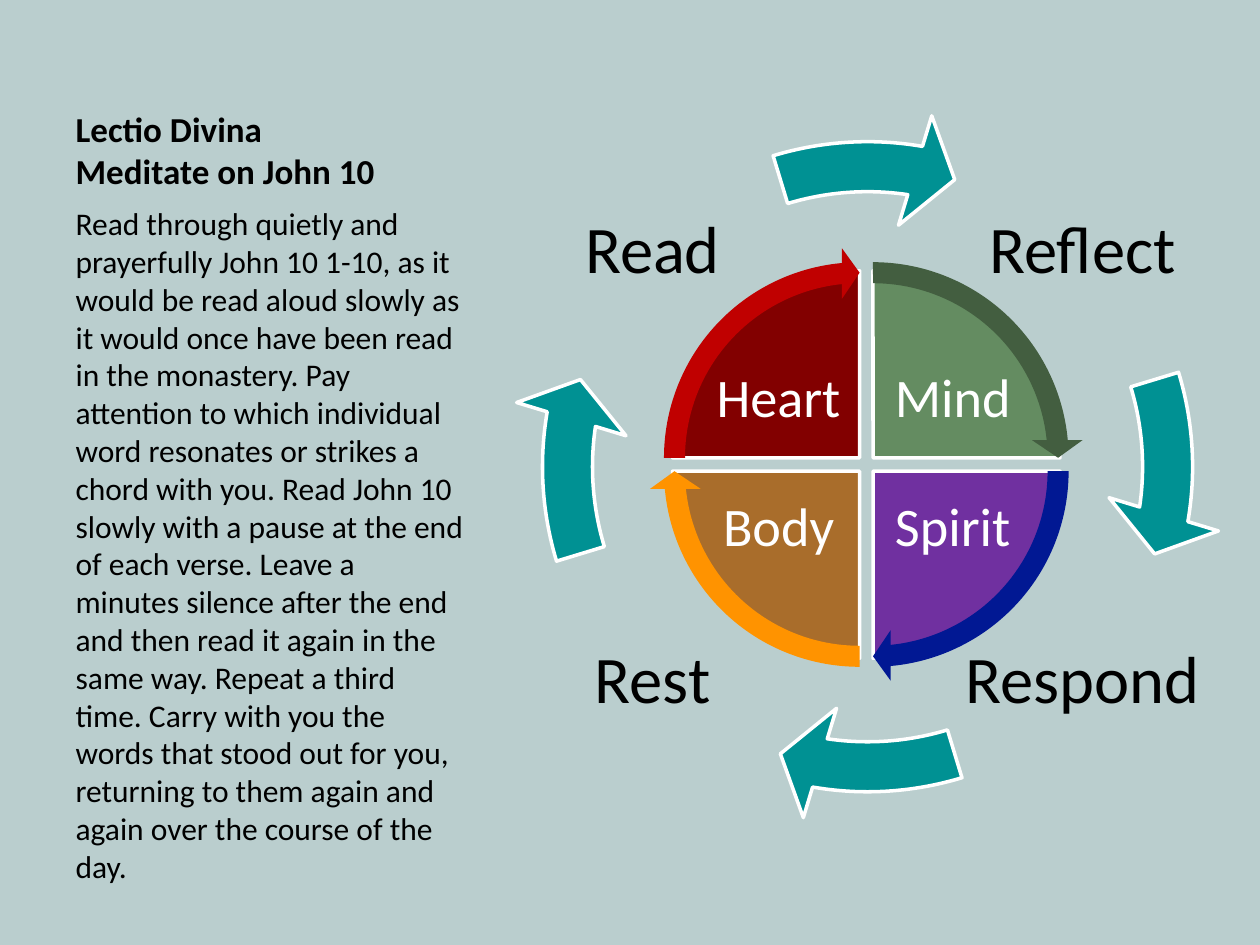
from pptx import Presentation
from pptx.dml.color import RGBColor
from pptx.enum import shapes, text
from pptx.util import Cm, Pt

COLORS = {
    "background": "BACECE", "black": "000000", "white": "FFFFFF", "cycle": "009193",
    "heart": "820000", "heart_arrow": "C00000",
    "mind": "648C61", "mind_arrow": "435E40",
    "spirit": "7030A0", "spirit_arrow": "011893",
    "body": "A96D2B", "body_arrow": "FF9300",
}
FONT = "Calibri"
ANGLE_UNIT = 0.6  # adjustment value of one degree

TITLE_LINES = ["Lectio Divina ", "Meditate on John 10"]
INSTRUCTIONS = (
    "Read through quietly and prayerfully John 10 1-10, as it would be read aloud slowly "
    "as it would once have been read in the monastery. Pay attention to which individual "
    "word resonates or strikes a chord with you. Read John 10 slowly with a pause at the "
    "end of each verse. Leave a minutes silence after the end and then read it again in "
    "the same way. Repeat a third time. Carry with you the words that stood out for you, "
    "returning to them again and again over the course of the day."
)
# Name, column, row and start angle of each quarter, clockwise from top right
QUARTERS = [("Mind", 1, 0, 270), ("Spirit", 1, 1, 0), ("Body", 0, 1, 90), ("Heart", 0, 0, 180)]
# Name, column, row and start angle of the arrow that follows each step
STEPS = [("Reflect", 1, 0, 343.11), ("Respond", 1, 1, 73.11),
         ("Rest", 0, 1, 163.11), ("Read", 0, 0, 253.11)]


def color(name):
    return RGBColor.from_string(COLORS[name])


def add_run(paragraph, words, size, color_name, bold=False):
    run = paragraph.add_run()
    run.text = words
    run.font.name = FONT
    run.font.size = Pt(size)
    run.font.bold = bold
    run.font.color.rgb = color(color_name)


def add_label(slide, words, box, size, color_name, inset):
    frame = slide.shapes.add_textbox(*map(Cm, box)).text_frame
    frame.word_wrap = True
    frame.vertical_anchor = text.MSO_ANCHOR.MIDDLE
    frame.margin_left = frame.margin_right = Cm(inset)
    frame.margin_top = frame.margin_bottom = Cm(inset)
    paragraph = frame.paragraphs[0]
    paragraph.alignment = text.PP_ALIGN.CENTER
    paragraph.line_spacing = 0.9
    add_run(paragraph, words, size, color_name)


def add_round_shape(slide, kind, left, top, size, adjustments, fill, outlined):
    shape = slide.shapes.add_shape(kind, Cm(left), Cm(top), Cm(size), Cm(size))
    shape.shadow.inherit = False
    for index, value in enumerate(adjustments):
        shape.adjustments[index] = value
    shape.fill.solid()
    shape.fill.fore_color.rgb = color(fill)
    if outlined:
        shape.line.color.rgb = color("white")
        shape.line.width = Pt(2)
    else:
        shape.line.fill.background()


def add_arc_arrow(slide, left, top, size, start, end, thickness, head_angle, head_width,
                  fill, outlined):
    adjustments = [thickness, head_angle * ANGLE_UNIT, end % 360 * ANGLE_UNIT,
                   start * ANGLE_UNIT, head_width]
    add_round_shape(slide, shapes.MSO_SHAPE.CIRCULAR_ARROW, left, top, size,
                    adjustments, fill, outlined)


def place(placeholder, box, anchor):
    placeholder.left, placeholder.top, placeholder.width, placeholder.height = map(Cm, box)
    frame = placeholder.text_frame
    frame.word_wrap = True
    frame.auto_size = text.MSO_AUTO_SIZE.NONE
    frame.vertical_anchor = anchor
    paragraph = frame.paragraphs[0]
    paragraph.alignment = text.PP_ALIGN.LEFT
    paragraph.space_before = Pt(0)
    return paragraph


def add_caption(slide, left, top, width, height):
    title_height = 3.23
    paragraph = place(slide.shapes.title, (left, top, width, title_height),
                      text.MSO_ANCHOR.BOTTOM)
    for index, line in enumerate(TITLE_LINES):
        if index:
            paragraph.add_line_break()
        add_run(paragraph, line, 20, "black", bold=True)

    box = (left, top + title_height, width, height - title_height)
    paragraph = place(slide.placeholders[2], box, text.MSO_ANCHOR.TOP)
    add_run(paragraph, INSTRUCTIONS, 18, "black")


def add_wheel(slide, left, top, size, gap):
    # Quarters with their names
    for name, column, row, start in QUARTERS:
        add_round_shape(slide, shapes.MSO_SHAPE.PIE, left + column * gap, top + row * gap, size,
                        [start * ANGLE_UNIT, (start + 90) % 360 * ANGLE_UNIT],
                        name.lower(), outlined=True)
        box = (left + 0.74 + column * 3.51, top + 1.58 + row * 2.6, 2.79, 2.06)
        add_label(slide, name, box, 31, "white", 0.1)

    # Arrows along the rim
    overhang, head_angle = 0.47, 5.46
    for name, column, row, start in QUARTERS:
        add_arc_arrow(slide, left + column * gap - overhang, top + row * gap - overhang,
                      size + 2 * overhang, start, start + 90 - head_angle,
                      0.05, head_angle, 0.06, f"{name.lower()}_arrow", outlined=False)


def add_cycle(slide, left, top, size):
    label_size, label_step, label_inset = 5.11, 8.67, 0.31
    for name, column, row, start in STEPS:
        box = (left + label_inset + column * label_step, top + label_inset + row * label_step,
               label_size, label_size)
        add_label(slide, name, box, 38, "black", 0.13)
        add_arc_arrow(slide, left, top, size, start, start + 26.02,
                      0.07, 7.76, 0.08, "cycle", outlined=True)


def main():
    presentation = Presentation()
    presentation.slide_width, presentation.slide_height = Cm(25.4), Cm(19.05)
    slide = presentation.slides.add_slide(presentation.slide_layouts[7])
    slide.background.fill.solid()
    slide.background.fill.fore_color.rgb = color("background")
    content = slide.placeholders[1].element
    content.getparent().remove(content)

    add_caption(slide, 1.27, 0.76, 8.36, 16.26)
    add_wheel(slide, 13.56, 5.46, 7.54, 0.27)
    add_cycle(slide, 10.29, 2.21, 14.4)
    presentation.save("out.pptx")


if __name__ == "__main__":
    main()
